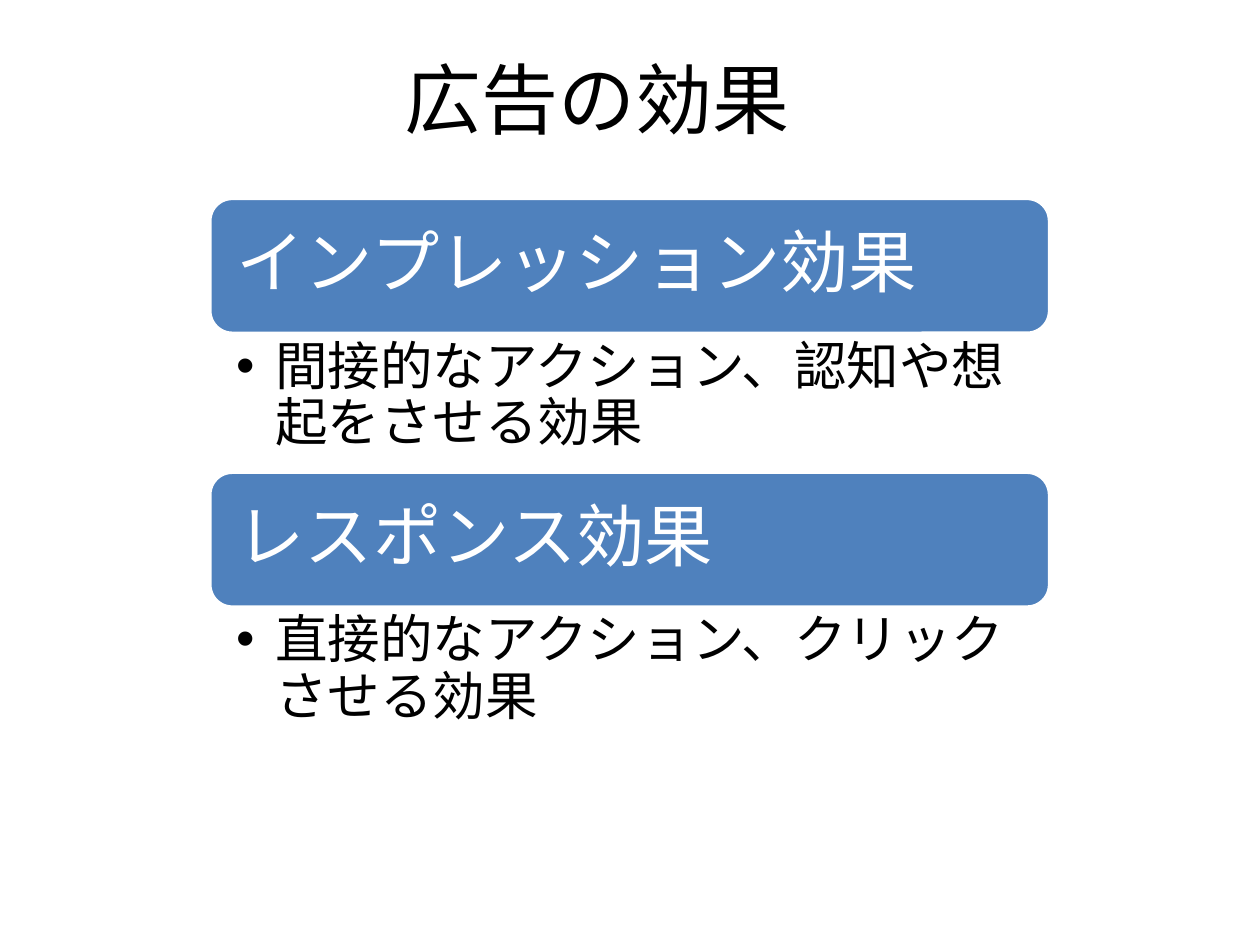
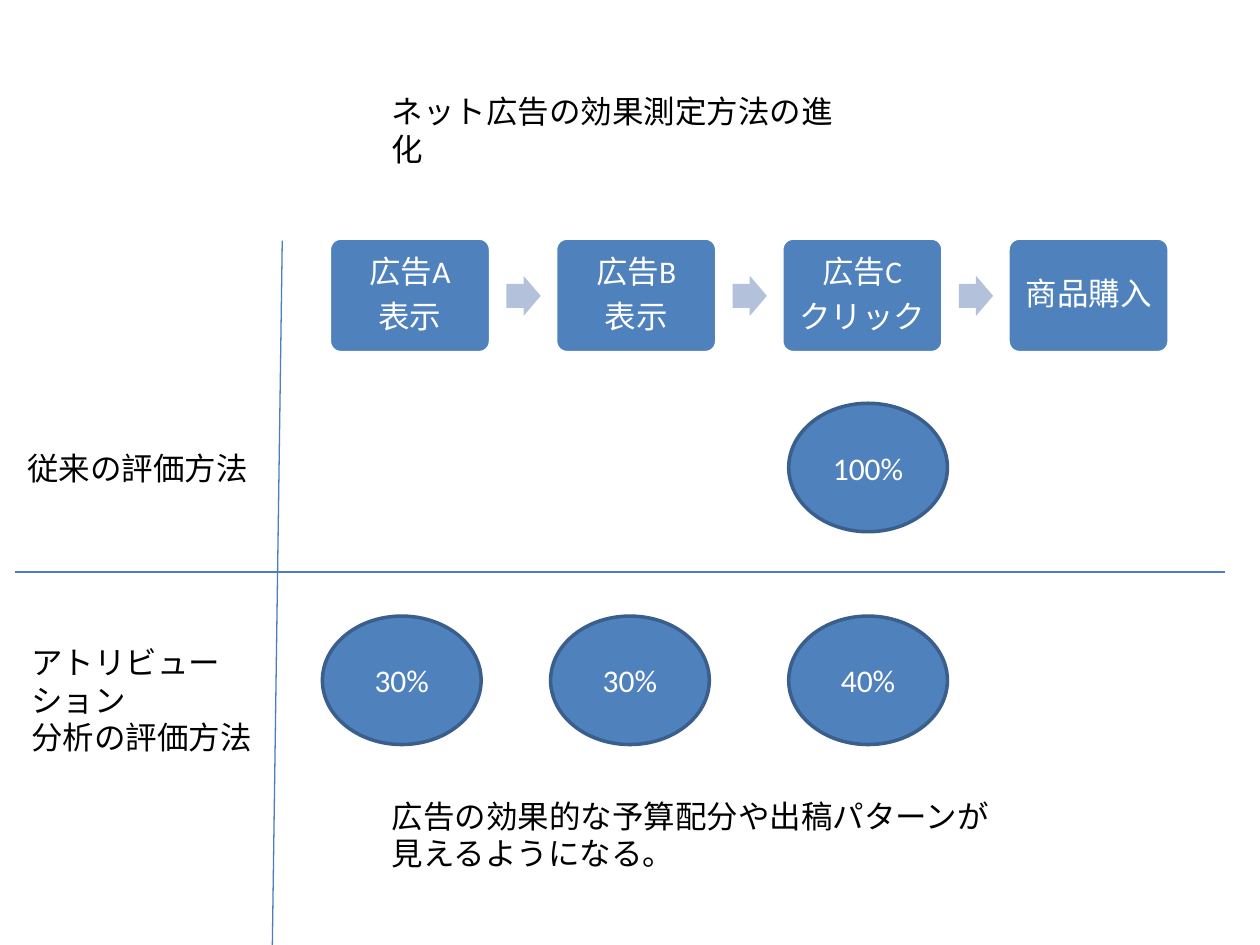
"""Build two slides on the effects of advertising and how they are measured."""
from dataclasses import dataclass

from pptx import Presentation
from pptx.dml.color import RGBColor
from pptx.enum.shapes import MSO_CONNECTOR, MSO_SHAPE
from pptx.enum.text import MSO_ANCHOR, MSO_AUTO_SIZE, PP_ALIGN
from pptx.oxml.ns import qn
from pptx.shapes.autoshape import Shape
from pptx.slide import Slide
from pptx.util import Cm, Pt
from lxml import etree

BLUE = RGBColor(0x4F, 0x81, 0xBD)
DARK_BLUE = RGBColor(0x3A, 0x5F, 0x8C)
LINE_BLUE = RGBColor(0x4B, 0x7E, 0xBC)
PALE_BLUE = RGBColor(0xB3, 0xC1, 0xDB)
WHITE = RGBColor(0xFF, 0xFF, 0xFF)
BLACK = RGBColor(0x00, 0x00, 0x00)

ROUNDED = MSO_SHAPE.ROUNDED_RECTANGLE
ARROW = MSO_SHAPE.RIGHT_ARROW
OVAL = MSO_SHAPE.OVAL
STRAIGHT = MSO_CONNECTOR.STRAIGHT
LEFT, CENTER = PP_ALIGN.LEFT, PP_ALIGN.CENTER
TOP, MIDDLE = MSO_ANCHOR.TOP, MSO_ANCHOR.MIDDLE
FIXED_SIZE = MSO_AUTO_SIZE.NONE

FONT = "Calibri"
TITLE_ONLY, TWO_CONTENT = 5, 3


@dataclass(frozen=True)
class Box:
    """Position and size in centimetres."""

    left: float
    top: float
    width: float
    height: float

    def place(self, shape: Shape) -> None:
        """Move a shape to this box."""
        shape.left, shape.top = Cm(self.left), Cm(self.top)
        shape.width, shape.height = Cm(self.width), Cm(self.height)


@dataclass(frozen=True)
class TextStyle:
    """Look of a text; insets (left, top, right, bottom) in centimetres."""

    size: float
    color: RGBColor = BLACK
    align: PP_ALIGN = LEFT
    anchor: MSO_ANCHOR = TOP
    insets: tuple[float, float, float, float] = (0.25, 0.13, 0.25, 0.13)
    line_spacing: float = 1.0
    space_after: float = 0


@dataclass(frozen=True)
class Effect:
    """An advertising effect and its explanation."""

    name: str
    explanation: str


@dataclass(frozen=True)
class Share:
    """Credit given to one advertisement by one evaluation method."""

    left: float
    top: float
    value: str


TITLE = TextStyle(44)
PLAIN = TextStyle(18)
HEADING = TextStyle(39, WHITE, LEFT, MIDDLE, (0.41,) * 4, 0.9, 13.65)
EXPLANATION = TextStyle(30, insets=(0.53, 0.13, 0.76, 0.13), line_spacing=0.9, space_after=6)
STEP = TextStyle(18, WHITE, CENTER, MIDDLE, (0.18,) * 4, 0.9, 6.3)
PERCENT = TextStyle(18, WHITE, CENTER, MIDDLE)

EFFECTS = (
    Effect("インプレッション効果", "間接的なアクション、認知や想起をさせる効果"),
    Effect("レスポンス効果", "直接的なアクション、クリックさせる効果"),
)
EFFECT_TOP, EFFECT_PITCH = 4.0, 5.52

STEPS = ("広告A\n表示", "広告B\n表示", "広告C\nクリック", "商品購入")
STEP_LEFT, STEP_PITCH, ARROW_OFFSET = 6.64, 4.56, 3.57

OLD_ROW, NEW_ROW = 8.13, 12.42
SHARES = (
    Share(15.9, OLD_ROW, "100%"),
    Share(6.5, NEW_ROW, "30%"),
    Share(11.1, NEW_ROW, "30%"),
    Share(15.9, NEW_ROW, "40%"),
)
LABELS = (
    ("従来の評価方法", Box(0.3, 8.92, 5.02, 1.02)),
    ("アトリビューション\n分析の評価方法", Box(0.38, 12.83, 5.21, 1.8)),
    ("広告の効果的な予算配分や出稿パターンが見えるようになる。", Box(7.65, 15.93, 12.7, 1.8)),
)
DIVIDERS = ((0.3, 11.53, 24.69, 11.53), (5.69, 4.85, 5.49, 19.05))


def write(shape: Shape, text: str, style: TextStyle) -> None:
    """Fill a shape with styled text."""
    frame = shape.text_frame
    frame.text = text
    frame.word_wrap = True
    frame.auto_size = FIXED_SIZE
    frame.vertical_anchor = style.anchor
    left, top, right, bottom = style.insets
    frame.margin_left, frame.margin_top = Cm(left), Cm(top)
    frame.margin_right, frame.margin_bottom = Cm(right), Cm(bottom)
    for paragraph in frame.paragraphs:
        paragraph.alignment = style.align
        paragraph.line_spacing = style.line_spacing
        paragraph.space_before = Pt(0)
        paragraph.space_after = Pt(style.space_after)
        for run in paragraph.runs:
            run.font.name = FONT
            run.font.size = Pt(style.size)
            run.font.color.rgb = style.color


def set_title(slide: Slide, text: str, box: Box, style: TextStyle) -> None:
    """Move and fill the title placeholder."""
    box.place(slide.shapes.title)
    write(slide.shapes.title, text, style)


def add_list(placeholder: Shape, text: str, box: Box) -> None:
    """Move and fill a bulleted body placeholder."""
    box.place(placeholder)
    write(placeholder, text, EXPLANATION)
    for paragraph in placeholder.text_frame.paragraphs:
        properties = paragraph._p.get_or_add_pPr()
        properties.set("marL", str(Cm(0.79)))
        properties.set("indent", str(Cm(-0.79)))
        etree.SubElement(properties, qn("a:buChar")).set("char", "•")


def add_figure(slide: Slide, kind: MSO_SHAPE, box: Box, fill: RGBColor,
               outline: RGBColor | None = None) -> Shape:
    """Add a filled preset shape, outlined if a colour is given."""
    shape = slide.shapes.add_shape(
        kind, Cm(box.left), Cm(box.top), Cm(box.width), Cm(box.height))
    shape.shadow.inherit = False
    shape.fill.solid()
    shape.fill.fore_color.rgb = fill
    if outline is None:
        shape.line.fill.background()
    else:
        shape.line.color.rgb = outline
        shape.line.width = Pt(2)
    return shape


def add_label(slide: Slide, text: str, box: Box) -> None:
    """Add a plain text box."""
    label = slide.shapes.add_textbox(
        Cm(box.left), Cm(box.top), Cm(box.width), Cm(box.height))
    write(label, text, PLAIN)


def add_divider(slide: Slide, ends: tuple[float, float, float, float]) -> None:
    """Add a thin straight line."""
    line = slide.shapes.add_connector(STRAIGHT, *(Cm(value) for value in ends))
    line.line.color.rgb = LINE_BLUE
    line.line.width = Pt(0.75)
    etree.SubElement(line.element.spPr, qn("a:effectLst"))


def build_effects(slide: Slide) -> None:
    """Draw the two advertising effects."""
    set_title(slide, "広告の効果", Box(7.9, 0.91, 8.4, 2.13), TITLE)
    bodies = [item for item in slide.placeholders if item.placeholder_format.idx > 0]
    for index, (effect, body) in enumerate(zip(EFFECTS, bodies)):
        top = EFFECT_TOP + index * EFFECT_PITCH
        heading = add_figure(slide, ROUNDED, Box(4.23, top, 16.93, 2.72), BLUE, WHITE)
        write(heading, effect.name, HEADING)
        add_list(body, effect.explanation, Box(4.23, top + 2.72, 16.93, 2.8))


def build_measurement(slide: Slide) -> None:
    """Draw the purchase path and the credit given by each method."""
    set_title(slide, "ネット広告の効果測定方法の進化", Box(7.65, 1.73, 9.7, 1.02), PLAIN)
    for index, text in enumerate(STEPS):
        left = STEP_LEFT + index * STEP_PITCH
        step = add_figure(slide, ROUNDED, Box(left, 4.8, 3.25, 2.31), BLUE, WHITE)
        step.adjustments[0] = 0.1
        write(step, text, STEP)
        if index < len(STEPS) - 1:
            arrow = add_figure(
                slide, ARROW, Box(left + ARROW_OFFSET, 5.56, 0.69, 0.81), PALE_BLUE)
            arrow.adjustments[0] = 0.6
    for share in SHARES:
        oval = add_figure(slide, OVAL, Box(share.left, share.top, 3.2, 2.59), BLUE, DARK_BLUE)
        write(oval, share.value, PERCENT)
    for text, box in LABELS:
        add_label(slide, text, box)
    for ends in DIVIDERS:
        add_divider(slide, ends)


def main() -> None:
    """Build and save the presentation."""
    presentation = Presentation()
    presentation.slide_width, presentation.slide_height = Cm(25.4), Cm(19.05)
    layouts = presentation.slide_layouts
    build_effects(presentation.slides.add_slide(layouts[TWO_CONTENT]))
    build_measurement(presentation.slides.add_slide(layouts[TITLE_ONLY]))
    presentation.save("out.pptx")


if __name__ == "__main__":
    main()
